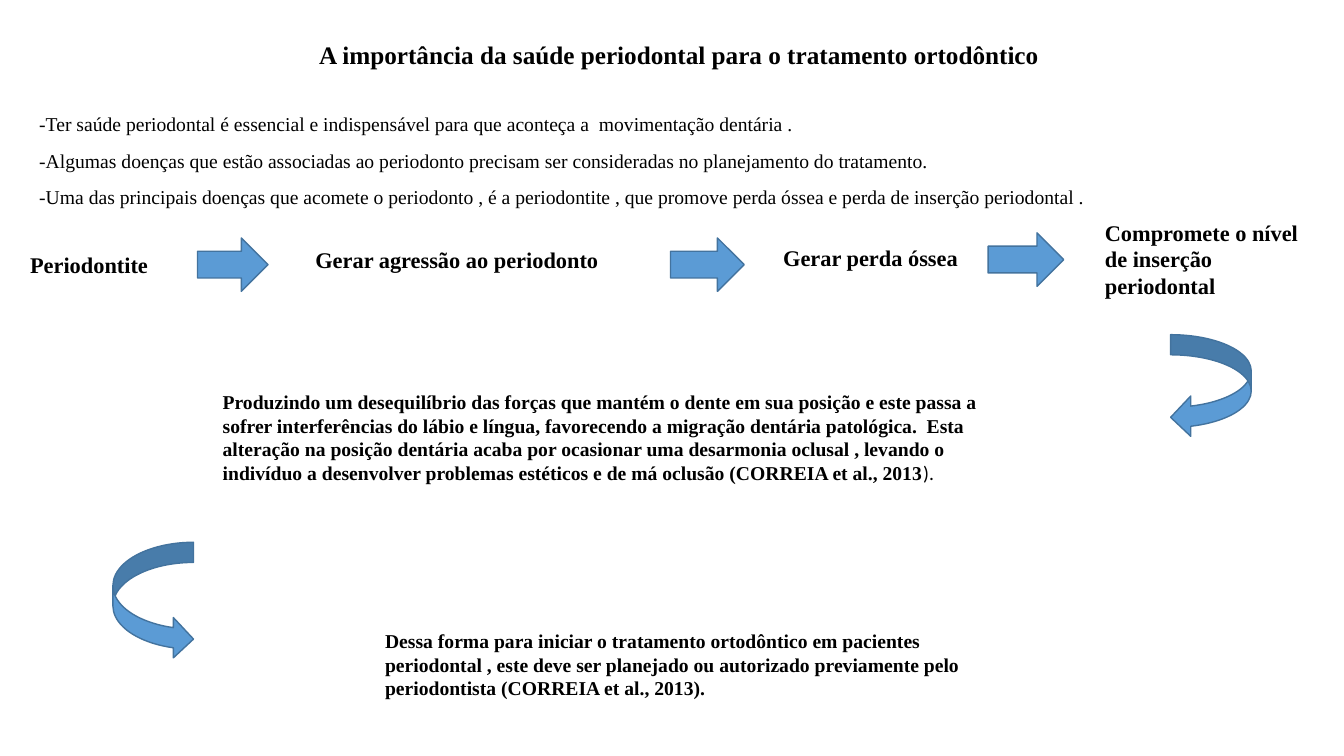
import pptx
import pptx.dml.color
import pptx.enum.shapes
import pptx.enum.text
import pptx.util

SHAPES = pptx.enum.shapes.MSO_SHAPE
ANCHOR = pptx.enum.text.MSO_ANCHOR
WIDTH, HEIGHT = pptx.util.Inches(13.33), pptx.util.Inches(7.5)
COLUMN, ROW = WIDTH / 100, HEIGHT / 100  # a grid of 100 by 100 cells

TITLE = "A importância da saúde periodontal para o tratamento ortodôntico"
POINTS = [
    "-Ter saúde periodontal é essencial e indispensável para que aconteça a  movimentação dentária .",
    "-Algumas doenças que estão associadas ao periodonto precisam ser consideradas no planejamento do tratamento.",
    "-Uma das principais doenças que acomete o periodonto , é a periodontite , que promove perda óssea "
    "e perda de inserção periodontal .",
]
# Label, then its left, top, width and height within the flow
STEPS = [
    ("Periodontite", (1.5, 4.53, 10.43, 4.93)),
    ("Gerar agressão ao periodonto", (22.73, 3.87, 22.88, 4.93)),
    ("Gerar perda óssea", (57.54, 3.6, 15.08, 4.93)),
    ("Compromete o nível de inserção periodontal", (81.47, 0.27, 17.18, 12.13)),
]
STEP_ARROWS = [(14.7, 3.47, 5.25, 7.07), (49.89, 3.47, 5.48, 7.07), (73.52, 2.8, 5.63, 7.07)]
IMBALANCE = (
    "Produzindo um desequilíbrio das forças que mantém o dente em sua posição e este passa a sofrer "
    "interferências do lábio e língua, favorecendo a migração dentária patológica.  Esta alteração na "
    "posição dentária acaba por ocasionar uma desarmonia oclusal , levando o indivíduo a desenvolver "
    "problemas estéticos e de má oclusão (CORREIA et al., 2013"
)
CONCLUSION = (
    "Dessa forma para iniciar o tratamento ortodôntico em pacientes periodontal , este deve ser planejado "
    "ou autorizado previamente pelo periodontista (CORREIA et al., 2013)."
)


def color(value):
    return pptx.dml.color.RGBColor.from_string(value)


def inside(box, part):
    """Turn a part's place within a box into its place on the page."""
    return box[0] + part[0], box[1] + part[1], *part[2:]


def lengths(box):
    left, top, width, height = box
    return round(left * COLUMN), round(top * ROW), round(width * COLUMN), round(height * ROW)


def add_span(para, text, size=14, bold=True, font="Times New Roman"):
    span = para.add_run()
    span.text = text
    span.font.size = pptx.util.Pt(size)
    span.font.bold = bold
    span.font.name = font
    span.font.color.rgb = color("000000")


def add_text(page, box, text, wrap=True, **style):
    frame = page.shapes.add_textbox(*lengths(box)).text_frame
    frame.word_wrap = wrap
    add_span(frame.paragraphs[0], text, **style)
    return frame


def add_arrow(page, box, kind):
    arrow = page.shapes.add_shape(kind, *lengths(box))
    arrow.shadow.inherit = False
    arrow.fill.solid()
    arrow.fill.fore_color.rgb = color("5B9BD5")
    arrow.line.color.rgb = color("43739E")
    arrow.line.width = pptx.util.Pt(1)


def add_title(page, box):
    title = page.shapes.title
    title.left, title.top, title.width, title.height = lengths(box)
    frame = title.text_frame
    frame.word_wrap = False
    frame.auto_size = pptx.enum.text.MSO_AUTO_SIZE.NONE
    frame.vertical_anchor = ANCHOR.MIDDLE
    para = frame.paragraphs[0]
    para.alignment = pptx.enum.text.PP_ALIGN.CENTER
    add_span(para, TITLE, size=18)


def add_points(page, box):
    frame = add_text(page, box, POINTS[0], bold=False)
    for point in POINTS[1:]:
        add_span(frame.add_paragraph(), point, bold=False)
    for para in frame.paragraphs:
        para.line_spacing = 0.9
        para.space_before = pptx.util.Pt(11)
    frame.paragraphs[0].space_before = pptx.util.Pt(0)


def add_flow(page, box):
    for label, part in STEPS:
        add_text(page, inside(box, part), label, wrap=label == STEPS[-1][0], size=16)
    for part in STEP_ARROWS:
        add_arrow(page, inside(box, part), SHAPES.RIGHT_ARROW)


def add_imbalance(page, box):
    add_arrow(page, inside(box, (71.27, 0, 6, 13.6)), SHAPES.CURVED_LEFT_ARROW)
    frame = add_text(page, inside(box, (0, 6.66, 60.47, 13.87)), IMBALANCE)
    add_span(frame.paragraphs[0], ").", bold=False, font="Calibri")


def add_conclusion(page, box):
    add_arrow(page, inside(box, (0, 0, 6, 15.47)), SHAPES.CURVED_RIGHT_ARROW)
    add_text(page, inside(box, (19.51, 10.8, 45.61, 10.8)), CONCLUSION)


def main():
    deck = pptx.Presentation()
    deck.slide_width, deck.slide_height = WIDTH, HEIGHT
    page = deck.slides.add_slide(deck.slide_layouts.get_by_name("Title Only"))
    add_title(page, (22.73, 4.53, 55.59, 5.33))
    add_points(page, (2.18, 14.5, 90, 14.7))
    add_flow(page, (0, 28, 100, 13))
    add_imbalance(page, (15.83, 44.27, 77.27, 20.53))
    add_conclusion(page, (8.4, 71.73, 65.12, 21.6))
    deck.save("out.pptx")


if __name__ == "__main__":
    main()
